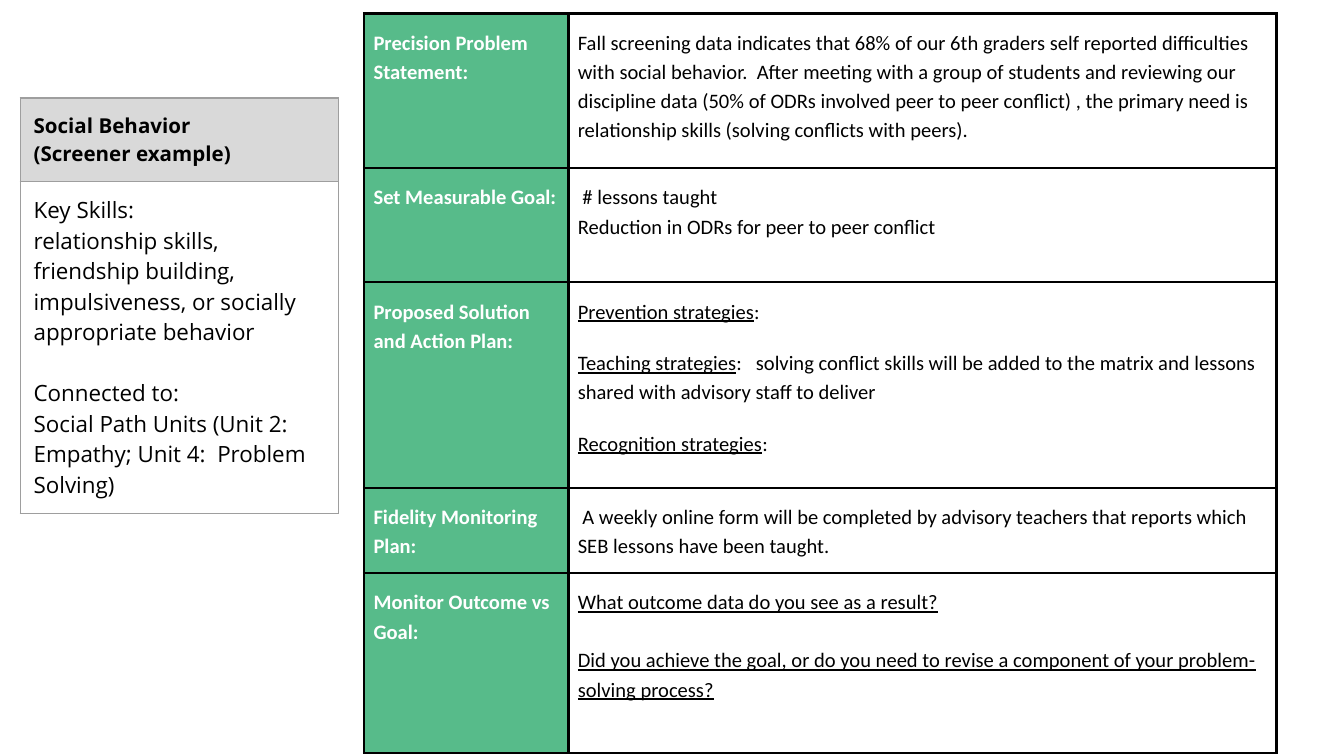
"""Build a slide with a social behavior skills card beside a problem-solving plan table."""
from dataclasses import dataclass

from lxml.etree import SubElement
from pptx import Presentation
from pptx.dml.color import RGBColor as RGB
from pptx.oxml.ns import qn
from pptx.util import Inches, Pt

COLORS = {"ink": "000000", "paper": "FFFFFF", "green": "57BB8A",
          "gray": "D9D9D9", "gray_line": "9E9E9E"}


@dataclass
class Para:
    """A paragraph: its lead text, a plain tail, and the gap above it in points."""
    lead: str
    tail: str = ""
    underline: bool = False
    before: float = 0


SKILLS_TITLE = [Para("Social Behavior"), Para("(Screener example)")]
SKILLS_BODY = [
    Para("Key Skills:\nrelationship skills, friendship building, impulsiveness, "
         "or socially appropriate behavior"),
    Para("Connected to:\nSocial Path Units (Unit 2:  Empathy; Unit 4:  Problem Solving)",
         before=16.3),
]
PLAN = [
    ("Precision Problem Statement:", 1.15, [
        Para("Fall screening data indicates that 68% of our 6th graders self reported "
             "difficulties with social behavior.  After meeting with a group of students "
             "and reviewing our discipline data (50% of ODRs involved peer to peer "
             "conflict) , the primary need is relationship skills (solving conflicts "
             "with peers).")]),
    ("Set Measurable Goal:", 0.85, [
        Para(" # lessons taught\nReduction in ODRs for peer to peer conflict")]),
    ("Proposed Solution and Action Plan:", 1.53, [
        Para("Prevention strategies", ":", True),
        Para("Teaching strategies", ":   solving conflict skills will be added to the "
             "matrix and lessons shared with advisory staff to deliver", True, 12),
        Para("Recognition strategies", ":", True, 12)]),
    ("Fidelity Monitoring Plan:", 0.63, [
        Para(" A weekly online form will be completed by advisory teachers that reports "
             "which SEB lessons have been taught.")]),
    ("Monitor Outcome vs Goal:", 1.34, [
        Para("What outcome data do you see as a result?", underline=True),
        Para("Did you achieve the goal, or do you need to revise a component of your "
             "problem-solving process?", underline=True, before=15.5)]),
]


def add_grid(slide, left, top, widths, heights):
    frame = slide.shapes.add_table(len(heights), len(widths), Inches(left), Inches(top),
                                   Inches(sum(widths)), Inches(sum(heights)))
    grid = frame.table
    grid.first_row = grid.horz_banding = False
    for column, width in zip(grid.columns, widths):
        column.width = Inches(width)
    for row, height in zip(grid.rows, heights):
        row.height = Inches(height)
    return grid


def set_borders(cell, color, widths):
    props = cell._tc.get_or_add_tcPr()
    for index, (side, width) in enumerate(zip("LRTB", widths)):
        line = SubElement(props, qn(f"a:ln{side}"), w=str(Pt(width)))
        SubElement(SubElement(line, qn("a:solidFill")), qn("a:srgbClr"), val=COLORS[color])
        props.insert(index, line)


def fill_cell(cell, paras, font, size, color="ink", bold=False, fill=None,
              side_inset=0.1, spacing=None):
    cell.margin_left = cell.margin_right = Inches(side_inset)
    cell.margin_top = cell.margin_bottom = Inches(0.1)
    if fill:
        cell.fill.solid()
        cell.fill.fore_color.rgb = RGB.from_string(COLORS[fill])
    else:
        cell.fill.background()
    frame = cell.text_frame
    for index, para in enumerate(paras):
        paragraph = frame.add_paragraph() if index else frame.paragraphs[0]
        paragraph.text = para.lead
        paragraph.space_before = Pt(para.before)
        paragraph.line_spacing = spacing
        for run in paragraph.runs:
            run.font.underline = para.underline
        if para.tail:
            paragraph.add_run().text = para.tail
        for run in paragraph.runs:
            run.font.name, run.font.size, run.font.bold = font, Pt(size), bold
            run.font.color.rgb = RGB.from_string(COLORS[color])


def add_skills(slide):
    skills = add_grid(slide, 0.15, 0.73, [2.37], [0.62, 2.47])
    title, body = skills.cell(0, 0), skills.cell(1, 0)
    fill_cell(title, SKILLS_TITLE, "Open Sans", 11, bold=True, fill="gray")
    fill_cell(body, SKILLS_BODY, "Open Sans", 12)
    for cell in (title, body):
        set_borders(cell, "gray_line", [0.75] * 4)


def add_plan(slide):
    plan = add_grid(slide, 2.71, 0.1, [1.52, 5.27], [height for _, height, _ in PLAN])
    style = {"font": "Calibri", "size": 11, "side_inset": 0.07, "spacing": 1.15}
    last = len(PLAN) - 1
    for index, (step, _, details) in enumerate(PLAN):
        label, detail = plan.cell(index, 0), plan.cell(index, 1)
        fill_cell(label, [Para(step)], color="paper", bold=True, fill="green", **style)
        fill_cell(detail, details, **style)
        top = 1.5 if index == 0 else 1
        bottom = 1.5 if index == last else 1
        for cell in (label, detail):
            set_borders(cell, "ink", [1.5, 1.5, top, bottom])


def main():
    deck = Presentation()
    deck.slide_width = Inches(10)
    deck.slide_height = deck.slide_width * 9 // 16
    slide = deck.slides.add_slide(deck.slide_layouts[6])
    add_skills(slide)
    add_plan(slide)
    deck.save("out.pptx")


if __name__ == "__main__":
    main()
